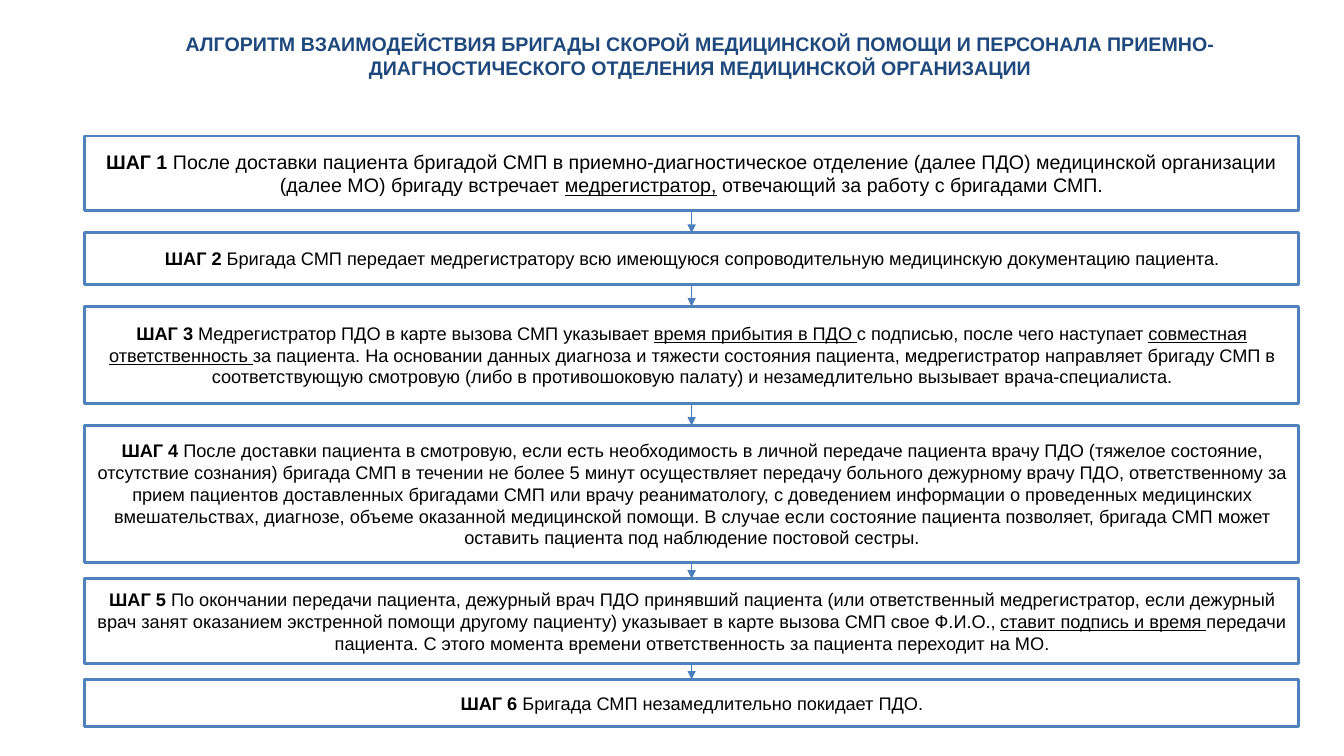
"""Builds a slide with the six-step ambulance handover algorithm."""
from lxml import etree
from pptx import Presentation
from pptx import util as u
from pptx.dml.color import RGBColor
from pptx.enum import shapes, text
from pptx.oxml.ns import qn

PX = u.Inches(1) // 100
NAVY = RGBColor(0x1F, 0x49, 0x7D)
BLUE = RGBColor(0x4F, 0x81, 0xBD)
ARROW_BLUE = RGBColor(0x4B, 0x7E, 0xBC)
WHITE = RGBColor(0xFF, 0xFF, 0xFF)
BLACK = RGBColor(0, 0, 0)
STEP_LEFT, STEP_WIDTH = 84, 1205

# Underscores enclose underlined words.
STEPS = [
    (135, 74, 14, "После доставки пациента бригадой СМП в приемно-диагностическое отделение "
     "(далее ПДО) медицинской организации (далее МО) бригаду встречает _медрегистратор,_ "
     "отвечающий за работу с бригадами СМП."),
    (231, 51, 13, "Бригада СМП передает медрегистратору всю имеющуюся сопроводительную "
     "медицинскую документацию пациента."),
    (304, 96, 13, "Медрегистратор ПДО в карте вызова СМП указывает _время прибытия в ПДО _"
     "с подписью, после чего наступает _совместная ответственность _за пациента. "
     "На основании данных диагноза и тяжести состояния пациента, медрегистратор направляет "
     "бригаду СМП в соответствующую смотровую (либо в противошоковую палату) "
     "и незамедлительно вызывает врача-специалиста."),
    (422, 136, 13, "После доставки пациента в смотровую, если есть необходимость в личной "
     "передаче пациента врачу ПДО (тяжелое состояние, отсутствие сознания) бригада СМП "
     "в течении не более 5 минут осуществляет передачу больного дежурному врачу ПДО, "
     "ответственному за прием пациентов доставленных бригадами СМП или врачу реаниматологу, "
     "с доведением информации о проведенных медицинских вмешательствах, диагнозе, объеме "
     "оказанной медицинской помощи. В случае если состояние пациента позволяет, бригада СМП "
     "может оставить пациента под наблюдение постовой сестры."),
    (574, 84, 13, "По окончании передачи пациента, дежурный врач ПДО принявший пациента "
     "(или ответственный медрегистратор, если дежурный врач занят оказанием экстренной помощи "
     "другому пациенту) указывает в карте вызова СМП свое Ф.И.О., _ставит подпись и время _"
     "передачи пациента. С этого момента времени ответственность за пациента переходит на МО."),
    (674, 47, 13, "Бригада СМП незамедлительно покидает ПДО."),
]


def add_run(paragraph, words, size, color, bold=False, underline=False):
    run = paragraph.add_run()
    run.text = words
    run.font.name = "Arial"
    run.font.size = u.Pt(size)
    run.font.color.rgb = color
    run.font.bold = bold
    run.font.underline = underline


deck = Presentation()
deck.slide_width, deck.slide_height = 1334 * PX, 750 * PX
slide = deck.slides.add_slide(deck.slide_layouts[5])

heading = slide.shapes.title
heading.left, heading.top, heading.width, heading.height = (n * PX for n in (117, 22, 1156, 66))
frame = heading.text_frame
frame.auto_size = text.MSO_AUTO_SIZE.NONE
frame.word_wrap = True
frame.vertical_anchor = text.MSO_ANCHOR.MIDDLE
frame.margin_left = frame.margin_right = 12 * PX
frame.margin_top = frame.margin_bottom = 6 * PX
heading_line = frame.paragraphs[0]
heading_line.alignment = text.PP_ALIGN.CENTER
add_run(heading_line, "АЛГОРИТМ ВЗАИМОДЕЙСТВИЯ БРИГАДЫ СКОРОЙ МЕДИЦИНСКОЙ ПОМОЩИ И ПЕРСОНАЛА "
        "ПРИЕМНО-ДИАГНОСТИЧЕСКОГО ОТДЕЛЕНИЯ МЕДИЦИНСКОЙ ОРГАНИЗАЦИИ", 14, NAVY, bold=True)

previous_step = None
for number, (top, height, size, wording) in enumerate(STEPS, 1):
    step = slide.shapes.add_shape(shapes.MSO_SHAPE.FLOWCHART_PROCESS, STEP_LEFT * PX, top * PX,
                                  STEP_WIDTH * PX, height * PX)
    step.shadow.inherit = False
    step.fill.solid()
    step.fill.fore_color.rgb = WHITE
    step.line.color.rgb = BLUE
    step.line.width = u.Pt(2)
    step.text_frame.word_wrap = True
    step.text_frame.vertical_anchor = text.MSO_ANCHOR.MIDDLE
    paragraph = step.text_frame.paragraphs[0]
    paragraph.alignment = text.PP_ALIGN.CENTER
    add_run(paragraph, f"ШАГ {number}", size, BLACK, bold=True)
    for index, words in enumerate(f" {wording}".split("_")):
        add_run(paragraph, words, size, BLACK, underline=index % 2 == 1)

    if previous_step is not None:
        arrow = slide.shapes.add_connector(shapes.MSO_CONNECTOR.STRAIGHT, 0, 0, 0, 0)
        arrow.begin_connect(previous_step, 2)
        arrow.end_connect(step, 0)
        arrow.line.color.rgb = ARROW_BLUE
        arrow.line.width = u.Pt(0.75)
        etree.SubElement(arrow.line._get_or_add_ln(), qn("a:tailEnd"), type="triangle")
        etree.SubElement(arrow._element.spPr, qn("a:effectLst"))
    previous_step = step

deck.save("out.pptx")
